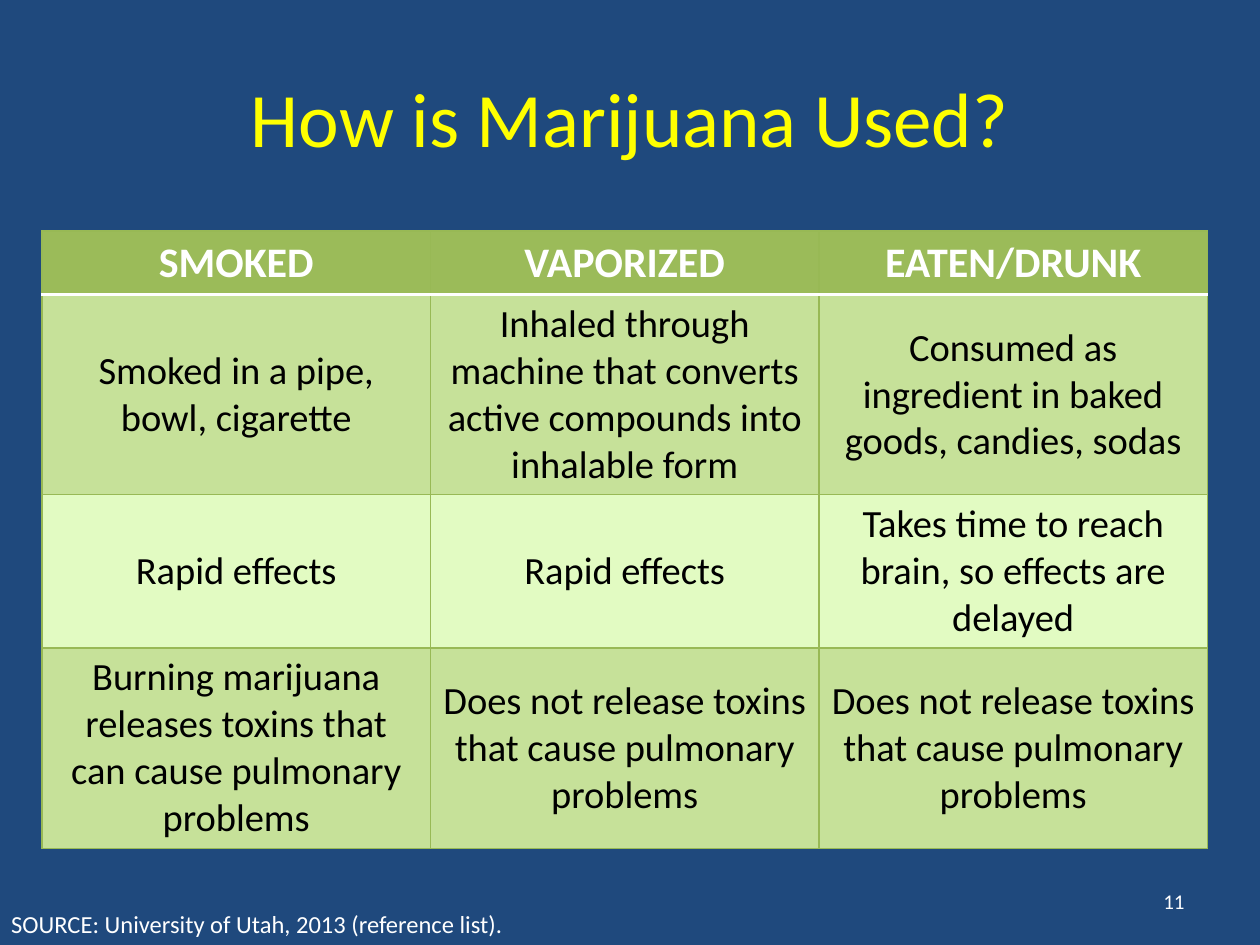
from lxml import etree
from pptx import Presentation
from pptx.dml.color import RGBColor
from pptx.enum.text import MSO_ANCHOR, PP_ALIGN
from pptx.oxml.ns import qn
from pptx.util import Pt

CENTER, LEFT, RIGHT = PP_ALIGN.CENTER, PP_ALIGN.LEFT, PP_ALIGN.RIGHT
TOP, MIDDLE = MSO_ANCHOR.TOP, MSO_ANCHOR.MIDDLE
FONT = "Calibri"
COLORS = {
    "background": "1F497D",
    "title": "FFFF00",
    "white": "FFFFFF",
    "text": "000000",
    "header": "9BBB59",
    "dark_band": "C6E199",
    "light_band": "E2FBC2",
    "border": "98B955",
}

TITLE = "How is Marijuana Used?"
ROWS = [
    ["SMOKED", "VAPORIZED", "EATEN/DRUNK"],
    [
        "Smoked in a pipe, bowl, cigarette",
        "Inhaled through machine that converts active compounds into inhalable form",
        "Consumed as ingredient in baked goods, candies, sodas",
    ],
    [
        "Rapid effects",
        "Rapid effects",
        "Takes time to reach brain, so effects are delayed",
    ],
    [
        "Burning marijuana releases toxins that can cause pulmonary problems",
        "Does not release toxins that cause pulmonary problems",
        "Does not release toxins that cause pulmonary problems",
    ],
]
ROW_HEIGHTS = [36.5, 114.3, 87.5, 114.3]
COLUMN_WIDTH = 222
TABLE_LEFT, TABLE_TOP = 24, 132
FOOTERS = [
    ("11", (516, 500.4, 168, 28.8), 12, RIGHT, MIDDLE),
    ("SOURCE: University of Utah, 2013 (reference list).",
     (-0.7, 516, 360, 24.5), 14, LEFT, TOP),
]


def rgb(name):
    return RGBColor.from_string(COLORS[name])


def write(frame, text, size, color, alignment, anchor, bold=False):
    frame.word_wrap = True
    frame.vertical_anchor = anchor
    paragraph = frame.paragraphs[0]
    paragraph.alignment = alignment
    run = paragraph.add_run()
    run.text = text
    run.font.name = FONT
    run.font.size = Pt(size)
    run.font.bold = bold
    run.font.color.rgb = rgb(color)


def add_border(cell, side, color, width):
    properties = cell._tc.get_or_add_tcPr()
    line = etree.SubElement(properties, qn(f"a:ln{side}"), w=str(Pt(width)))
    fill = etree.SubElement(line, qn("a:solidFill"))
    etree.SubElement(fill, qn("a:srgbClr"), val=COLORS[color])


def format_cell(cell, text, row):
    is_header = row == 0
    for side in "LRTB":
        is_rule = (row, side) in ((0, "B"), (1, "T"))
        add_border(cell, side, *(("white", 2) if is_rule else ("border", 0.75)))
    cell.fill.solid()
    band = "dark_band" if row % 2 else "light_band"
    cell.fill.fore_color.rgb = rgb("header" if is_header else band)
    write(cell.text_frame, text, 24 if is_header else 22,
          "white" if is_header else "text", CENTER, TOP, is_header)
    cell.vertical_anchor = TOP if is_header else MIDDLE


def add_usage_table(slide):
    columns = len(ROWS[0])
    table = slide.shapes.add_table(
        len(ROWS), columns, Pt(TABLE_LEFT), Pt(TABLE_TOP),
        Pt(COLUMN_WIDTH * columns), Pt(sum(ROW_HEIGHTS))).table
    table.horz_banding = False
    for column in table.columns:
        column.width = Pt(COLUMN_WIDTH)
    for row, (texts, height) in enumerate(zip(ROWS, ROW_HEIGHTS)):
        table.rows[row].height = Pt(height)
        for column, text in enumerate(texts):
            format_cell(table.cell(row, column), text, row)


def main():
    presentation = Presentation()
    presentation.slide_width, presentation.slide_height = Pt(720), Pt(540)
    slide = presentation.slides.add_slide(presentation.slide_layouts[5])
    slide.background.fill.solid()
    slide.background.fill.fore_color.rgb = rgb("background")

    title = slide.shapes.title
    title.left, title.top, title.width, title.height = map(Pt, (36, 21.6, 648, 90))
    write(title.text_frame, TITLE, 44, "title", CENTER, MIDDLE)

    add_usage_table(slide)
    for text, bounds, size, alignment, anchor in FOOTERS:
        box = slide.shapes.add_textbox(*map(Pt, bounds))
        write(box.text_frame, text, size, "white", alignment, anchor)
    presentation.save("out.pptx")


if __name__ == "__main__":
    main()
